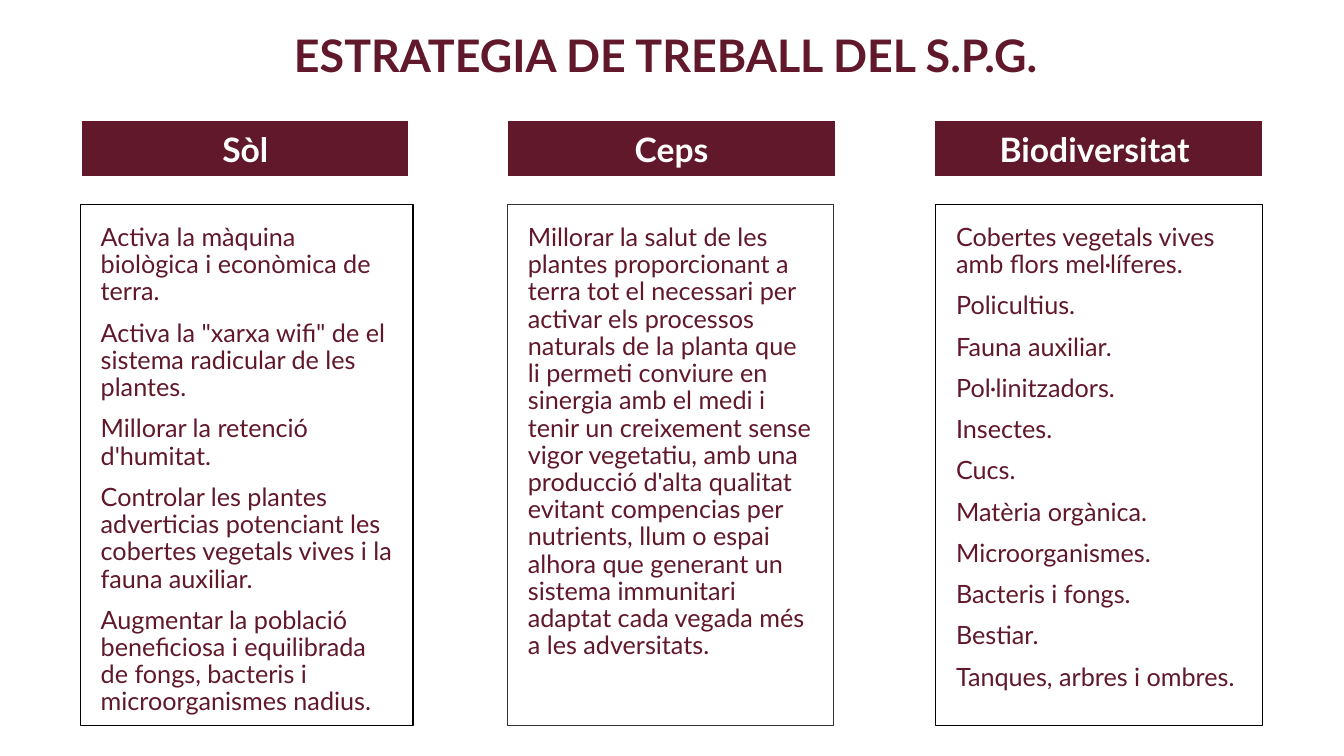
import pptx
import pptx.util
import pptx.dml.color
import pptx.enum.shapes
import pptx.enum.text

Inches = pptx.util.Inches
Pt = pptx.util.Pt
RGBColor = pptx.dml.color.RGBColor
Align = pptx.enum.text.PP_ALIGN
Anchor = pptx.enum.text.MSO_ANCHOR

WINE = RGBColor(0x60, 0x18, 0x2A)
WHITE = RGBColor(0xFF, 0xFF, 0xFF)
BLACK = RGBColor(0x00, 0x00, 0x00)
GRAY = RGBColor(0x33, 0x33, 0x33)

SOIL = [
    "Activa la màquina biològica i econòmica de terra.",
    'Activa la "xarxa wifi" de el sistema radicular de les plantes.',
    "Millorar la retenció d'humitat.",
    "Controlar les plantes adverticias potenciant les cobertes vegetals vives i la fauna auxiliar.",
    "Augmentar la població beneficiosa i equilibrada de fongs, bacteris i microorganismes nadius.",
]
VINES = [
    "Millorar la salut de les plantes proporcionant a terra tot el necessari per activar "
    "els processos naturals de la planta que li permeti conviure en sinergia amb el medi i "
    "tenir un creixement sense vigor vegetatiu, amb una producció d'alta qualitat evitant "
    "compencias per nutrients, llum o espai alhora que generant un sistema immunitari "
    "adaptat cada vegada més a les adversitats.",
]
BIODIVERSITY = [
    "Cobertes vegetals vives amb flors mel·líferes.",
    "Policultius.",
    "Fauna auxiliar.",
    "Pol·linitzadors.",
    "Insectes.",
    "Cucs.",
    "Matèria orgànica.",
    "Microorganismes.",
    "Bacteris i fongs.",
    "Bestiar.",
    "Tanques, arbres i ombres.",
]
COLUMNS = [
    ("Sòl", 0.81, SOIL, 0.8, 3.3, BLACK),
    ("Ceps", 5.04, VINES, 5.04, 3.23, GRAY),
    ("Biodiversitat ", 9.28, BIODIVERSITY, 9.29, 3.24, BLACK),
]


class StrategyPage:
    font = "Lato"

    def __init__(self, deck):
        self.page = deck.slides.add_slide(deck.slide_layouts[5])

    def set_text(self, box, lines, size, color, bold, align, anchor, insets, before):
        frame = box.text_frame
        frame.word_wrap = True
        frame.auto_size = pptx.enum.text.MSO_AUTO_SIZE.NONE
        frame.vertical_anchor = anchor
        frame.margin_left, frame.margin_top, frame.margin_right, frame.margin_bottom = map(Inches, insets)
        frame.text = "\n".join(lines)
        for para in frame.paragraphs:
            para.alignment = align
            para.line_spacing = 0.9
            para.space_before = Pt(before)
            for span in para.runs:
                span.font.name = self.font
                span.font.size = Pt(size)
                span.font.bold = bold
                span.font.color.rgb = color

    def title(self, text):
        box = self.page.shapes.title
        box.left, box.top, box.width, box.height = map(Inches, (2.42, 0.4, 8.49, 0.36))
        self.set_text(box, [text], 32, WINE, True, Align.CENTER, Anchor.MIDDLE, (0, 0, 0, 0), 0)

    def rectangle(self, left, top, width, height, fill, line):
        box = self.page.shapes.add_shape(
            pptx.enum.shapes.MSO_SHAPE.RECTANGLE,
            Inches(left), Inches(top), Inches(width), Inches(height))
        box.shadow.inherit = False
        box.fill.solid()
        box.fill.fore_color.rgb = fill
        box.line.color.rgb = line
        box.line.width = Pt(0.75)
        return box

    def header(self, text, left):
        box = self.rectangle(left, 1.2, 3.25, 0.55, WINE, WHITE)
        self.set_text(box, [text], 24, WHITE, True, Align.CENTER, Anchor.TOP, (0, 0.12, 0, 0), 10)

    def panel(self, lines, left, width, line):
        box = self.rectangle(left, 2.03, width, 5.17, WHITE, line)
        self.set_text(box, lines, 18, WINE, False, Align.LEFT, Anchor.TOP, (0.2, 0.2, 0.2, 0), 10)


def main():
    deck = pptx.Presentation()
    deck.slide_width = Inches(13.34)
    deck.slide_height = Inches(7.5)
    strategy = StrategyPage(deck)
    strategy.title("ESTRATEGIA DE TREBALL DEL S.P.G. ")
    for heading, header_left, lines, panel_left, panel_width, line in COLUMNS:
        strategy.header(heading, header_left)
        strategy.panel(lines, panel_left, panel_width, line)
    deck.save("out.pptx")


if __name__ == "__main__":
    main()
